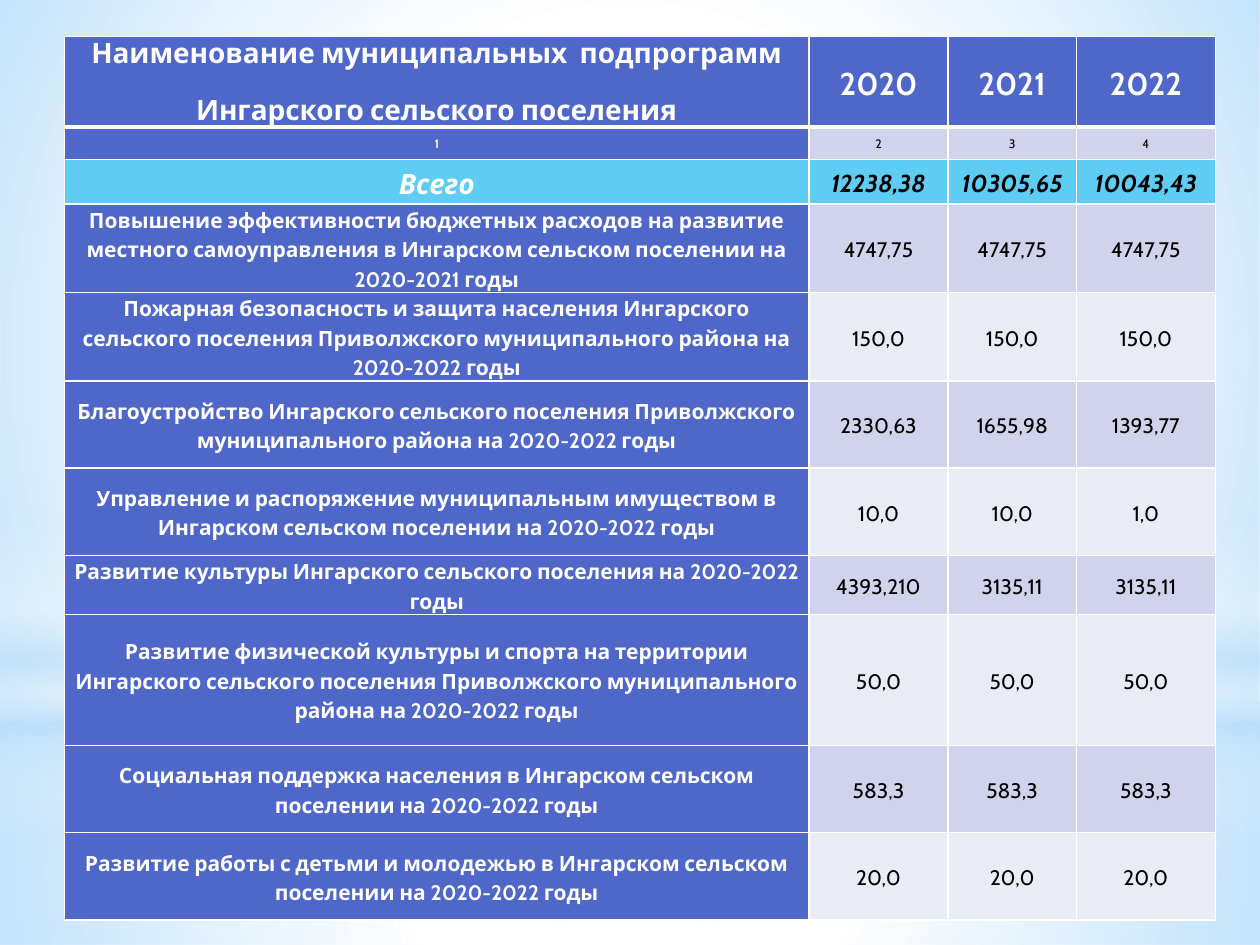
from dataclasses import dataclass

from lxml import etree
from pptx import Presentation
from pptx.dml.color import RGBColor
from pptx.enum.shapes import MSO_SHAPE
from pptx.enum.text import MSO_ANCHOR, PP_ALIGN
from pptx.oxml import parse_xml
from pptx.oxml.ns import nsdecls, qn
from pptx.util import Cm, Pt

RECT = MSO_SHAPE.RECTANGLE
OVAL = MSO_SHAPE.OVAL
MID = MSO_ANCHOR.MIDDLE
CENTER = PP_ALIGN.CENTER


@dataclass(frozen=True)
class Theme:
    font: str = "Cabin"
    white: str = "FFFFFF"
    black: str = "000000"
    sky: str = "B4DCFA"
    blue: str = "4E67C8"
    cyan: str = "5ECCF3"
    dark: str = "D0D3EB"
    light: str = "E9EBF5"
    year: int = 18
    head: int = 16
    total: int = 14
    body: int = 12
    tiny: int = 7


THEME = Theme()
WIDE, HIGH = 25.4, 19.05
COLS = [15.01, 2.8, 2.59, 2.8]
ROWS = [1.68, 0.66, 0.89] + [1.76] * 4 + [0.99, 2.64] + [1.76] * 2

GLOWS = [
    (RECT, (0, 14.17, WIDE, 4.88), "circle",
     [(0, THEME.white, 91), (37, THEME.white, 76), (100, THEME.sky, 79)]),
    (RECT, (0, 0, WIDE, 14.17), "circle",
     [(0, THEME.white, 89), (48, THEME.white, 62), (100, THEME.sky, 79)]),
    (RECT, (0, 10.46, WIDE, 6.35), "down",
     [(0, THEME.white, 0), (29, THEME.white, 30), (45, THEME.sky, 40),
      (55, THEME.white, 26), (65, THEME.sky, 60), (100, THEME.white, 0)]),
    (OVAL, (0, 4.45, WIDE, 14.17), "circle",
     [(0, THEME.white, 100), (56, THEME.white, 0)]),
]

DATA = [
    ("Наименование муниципальных  подпрограмм\nИнгарского сельского поселения",
     "2020", "2021", "2022"),
    ("1", "2", "3", "4"),
    ("Всего", "12238,38", "10305,65", "10043,43"),
    ("Повышение эффективности бюджетных расходов на развитие местного "
     "самоуправления в Ингарском сельском поселении на 2020-2021 годы",
     "4747,75", "4747,75", "4747,75"),
    ("Пожарная безопасность и защита населения Ингарского сельского поселения "
     "Приволжского муниципального района на 2020-2022 годы",
     "150,0", "150,0", "150,0"),
    ("Благоустройство Ингарского сельского поселения Приволжского "
     "муниципального района на 2020-2022 годы",
     "2330,63", "1655,98", "1393,77"),
    ("Управление и распоряжение муниципальным имуществом в Ингарском сельском "
     "поселении на 2020-2022 годы",
     "10,0", "10,0", "1,0"),
    ("Развитие культуры Ингарского сельского поселения на 2020-2022 годы",
     "4393,210", "3135,11", "3135,11"),
    ("Развитие физической культуры и спорта на территории Ингарского сельского "
     "поселения Приволжского муниципального района на 2020-2022 годы",
     "50,0", "50,0", "50,0"),
    ("Социальная поддержка населения в Ингарском сельском поселении "
     "на 2020-2022 годы",
     "583,3", "583,3", "583,3"),
    ("Развитие работы с детьми и молодежью в Ингарском сельском поселении "
     "на 2020-2022 годы",
     "20,0", "20,0", "20,0"),
]


class Deck:
    def __init__(self, theme):
        self.theme = theme
        self.prs = Presentation()
        self.prs.slide_width, self.prs.slide_height = Cm(WIDE), Cm(HIGH)
        self.slide = self.prs.slides.add_slide(self.prs.slide_layouts[6])
        fill = self.slide.background.fill
        fill.solid()
        fill.fore_color.rgb = RGBColor.from_string(theme.white)

    def glow(self, kind, box, way, stops):
        shape = self.slide.shapes.add_shape(kind, *map(Cm, box))
        shape.shadow.inherit = False
        shape.line.fill.background()
        marks = "".join(
            f'<a:gs pos="{pos * 1000}"><a:srgbClr val="{color}">'
            f'<a:alpha val="{alpha * 1000}"/></a:srgbClr></a:gs>'
            for pos, color, alpha in stops)
        flow = ('<a:lin ang="5400000" scaled="0"/>' if way == "down" else
                '<a:path path="circle"><a:fillToRect l="50000" t="50000" '
                'r="50000" b="50000"/></a:path>')
        grad = parse_xml(f'<a:gradFill {nsdecls("a")} rotWithShape="1">'
                         f'<a:gsLst>{marks}</a:gsLst>{flow}</a:gradFill>')
        shape.element.spPr.find(qn("a:prstGeom")).addnext(grad)

    def edge(self, cell, row):
        props = cell._tc.get_or_add_tcPr()
        thick = {0: "B", 1: "T"}.get(row)
        for side in "LRTB":
            width = Pt(3 if side == thick else 1)
            line = etree.SubElement(props, qn(f"a:ln{side}"), w=str(width))
            fill = etree.SubElement(line, qn("a:solidFill"))
            etree.SubElement(fill, qn("a:srgbClr"), val=self.theme.white)

    def style(self, row, col):
        look = self.theme
        label = col == 0
        size = {0: look.head if label else look.year, 1: look.tiny,
                2: look.head if label else look.total}.get(row, look.body)
        band = look.dark if row % 2 else look.light
        fill = look.cyan if row == 2 else look.blue if label or row == 0 else band
        color = look.white if label or row == 0 else look.black
        font = {"name": look.font, "size": Pt(size),
                "bold": label or row in (0, 2), "italic": row == 2}
        return fill, color, font

    def cell(self, cell, text, row, col):
        back, color, font = self.style(row, col)
        form = {"margin_left": Cm(0.13), "margin_right": Cm(0.13),
                "margin_top": 0, "margin_bottom": 0, "vertical_anchor": MID}
        for key, value in form.items():
            setattr(cell, key, value)
        self.edge(cell, row)
        cell.fill.solid()
        cell.fill.fore_color.rgb = RGBColor.from_string(back)
        cell.text = text
        paras = cell.text_frame.paragraphs
        for para in paras:
            form = {"alignment": CENTER,
                    "line_spacing": 1.15 if para is paras[-1] else 1.0,
                    "space_after": Pt(0 if row in (1, 2) else 10)}
            for key, value in form.items():
                setattr(para, key, value)
            for run in para.runs:
                for key, value in font.items():
                    setattr(run.font, key, value)
                run.font.color.rgb = RGBColor.from_string(color)

    def table(self, left, top, cols, rows, data):
        size = map(Cm, (left, top, sum(cols), sum(rows)))
        table = self.slide.shapes.add_table(len(rows), len(cols), *size).table
        table.horz_banding = False
        for part, width in zip(table.columns, cols):
            part.width = Cm(width)
        for part, height in zip(table.rows, rows):
            part.height = Cm(height)
        for row, line in enumerate(data):
            for col, text in enumerate(line):
                self.cell(table.cell(row, col), text, row, col)


def main():
    deck = Deck(THEME)
    for glow in GLOWS:
        deck.glow(*glow)
    deck.table(1.3, 0.74, COLS, ROWS, DATA)
    deck.prs.save("out.pptx")


if __name__ == "__main__":
    main()
